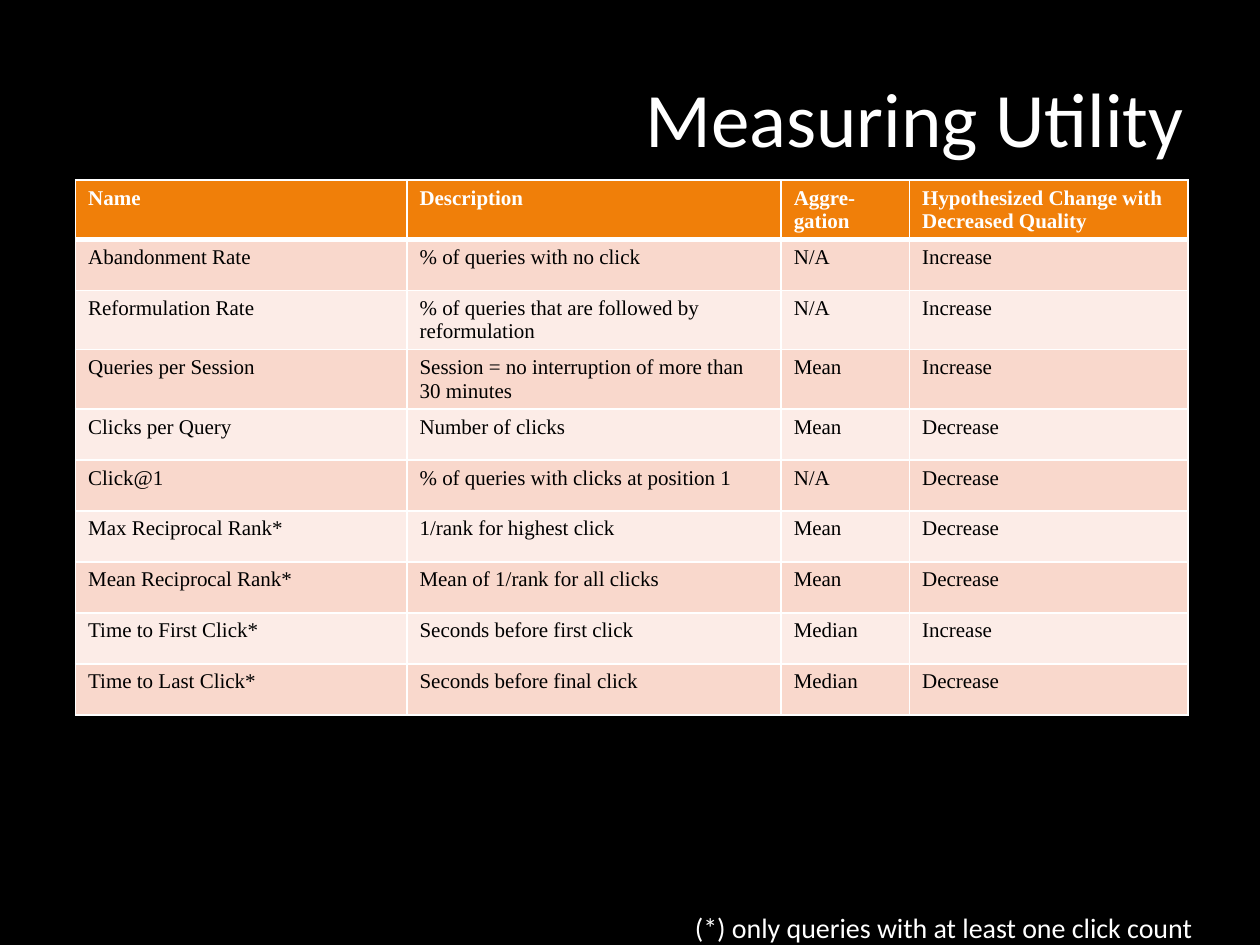
from lxml.etree import SubElement
from pptx import Presentation
from pptx.dml.color import RGBColor
from pptx.enum.text import MSO_ANCHOR, PP_ALIGN
from pptx.oxml.ns import qn
from pptx.util import Inches, Pt

COLORS = {"background": "000000", "light": "FFFFFF", "dark": "000000",
          "header": "F07F09", "odd": "F9D8CC", "even": "FCECE7"}
TITLE = "Measuring Utility"
FOOTNOTE = "(*) only queries with at least one click count"
HEADER = ("Name", "Description", "Aggre-gation",
          "Hypothesized Change with Decreased Quality")
METRICS = [
    ("Abandonment Rate", "% of queries with no click", "N/A", "Increase"),
    ("Reformulation Rate", "% of queries that are followed by reformulation", "N/A", "Increase"),
    ("Queries per Session", "Session = no interruption of more than 30 minutes", "Mean", "Increase"),
    ("Clicks per Query", "Number of clicks", "Mean", "Decrease"),
    ("Click@1", "% of queries with clicks at position 1", "N/A", "Decrease"),
    ("Max Reciprocal Rank*", "1/rank for highest click", "Mean", "Decrease"),
    ("Mean Reciprocal Rank*", "Mean of 1/rank for all clicks", "Mean", "Decrease"),
    ("Time to First Click*", "Seconds before first click", "Median", "Increase"),
    ("Time to Last Click*", "Seconds before final click", "Median", "Decrease"),
]
COLUMN_WIDTHS = (2.63, 2.97, 1.02, 2.21)
ROW_HEIGHT = 0.405
TABLE_LEFT, TABLE_TOP = 0.6, 1.43
THIN, THICK = 1, 3


def color(name):
    return RGBColor.from_string(COLORS[name])


def write(text_frame, text, size, font, color_name, alignment, bold=False):
    paragraph = text_frame.paragraphs[0]
    paragraph.alignment = alignment
    run = paragraph.add_run()
    run.text = text
    run.font.size = Pt(size)
    run.font.name = font
    run.font.bold = bold
    run.font.color.rgb = color(color_name)


def set_borders(cell, top, bottom):
    """Draw the four cell borders; they must come before the fill in the XML."""
    properties = cell._tc.get_or_add_tcPr()
    widths = {"a:lnL": THIN, "a:lnR": THIN, "a:lnT": top, "a:lnB": bottom}
    for index, (tag, width) in enumerate(widths.items()):
        line = SubElement(properties, qn(tag), w=str(Pt(width)))
        fill = SubElement(line, qn("a:solidFill"))
        SubElement(fill, qn("a:srgbClr"), val=COLORS["light"])
        properties.insert(index, line)


def add_metrics_table(slide):
    rows = [HEADER, *METRICS]
    table = slide.shapes.add_table(
        len(rows), len(HEADER), Inches(TABLE_LEFT), Inches(TABLE_TOP),
        Inches(sum(COLUMN_WIDTHS)), Inches(ROW_HEIGHT * len(rows))).table
    for column, width in zip(table.columns, COLUMN_WIDTHS):
        column.width = Inches(width)
    for row_index, row in enumerate(rows):
        is_header = row_index == 0
        fill = "header" if is_header else ("even", "odd")[row_index % 2]
        for column_index, text in enumerate(row):
            cell = table.cell(row_index, column_index)
            cell.fill.solid()
            cell.fill.fore_color.rgb = color(fill)
            set_borders(cell, top=THICK if row_index == 1 else THIN,
                        bottom=THICK if is_header else THIN)
            write(cell.text_frame, text, 12, "Times New Roman",
                  "light" if is_header else "dark", PP_ALIGN.LEFT, is_header)


def main():
    presentation = Presentation()
    presentation.slide_width, presentation.slide_height = Inches(10), Inches(7.5)
    slide = presentation.slides.add_slide(presentation.slide_layouts[5])
    slide.background.fill.solid()
    slide.background.fill.fore_color.rgb = color("background")

    title = slide.shapes.title
    title.left, title.top = Inches(0.5), Inches(0.3)
    title.width, title.height = Inches(9), Inches(1.25)
    title.text_frame.vertical_anchor = MSO_ANCHOR.MIDDLE
    write(title.text_frame, TITLE, 44, "Calibri", "light", PP_ALIGN.RIGHT)

    add_metrics_table(slide)

    footnote = slide.shapes.add_textbox(Inches(5.39), Inches(7.18), Inches(4.2), Inches(0.37))
    footnote.text_frame.word_wrap = False
    write(footnote.text_frame, FOOTNOTE, 16, "Calibri", "light", PP_ALIGN.CENTER)

    presentation.save("out.pptx")


if __name__ == "__main__":
    main()
